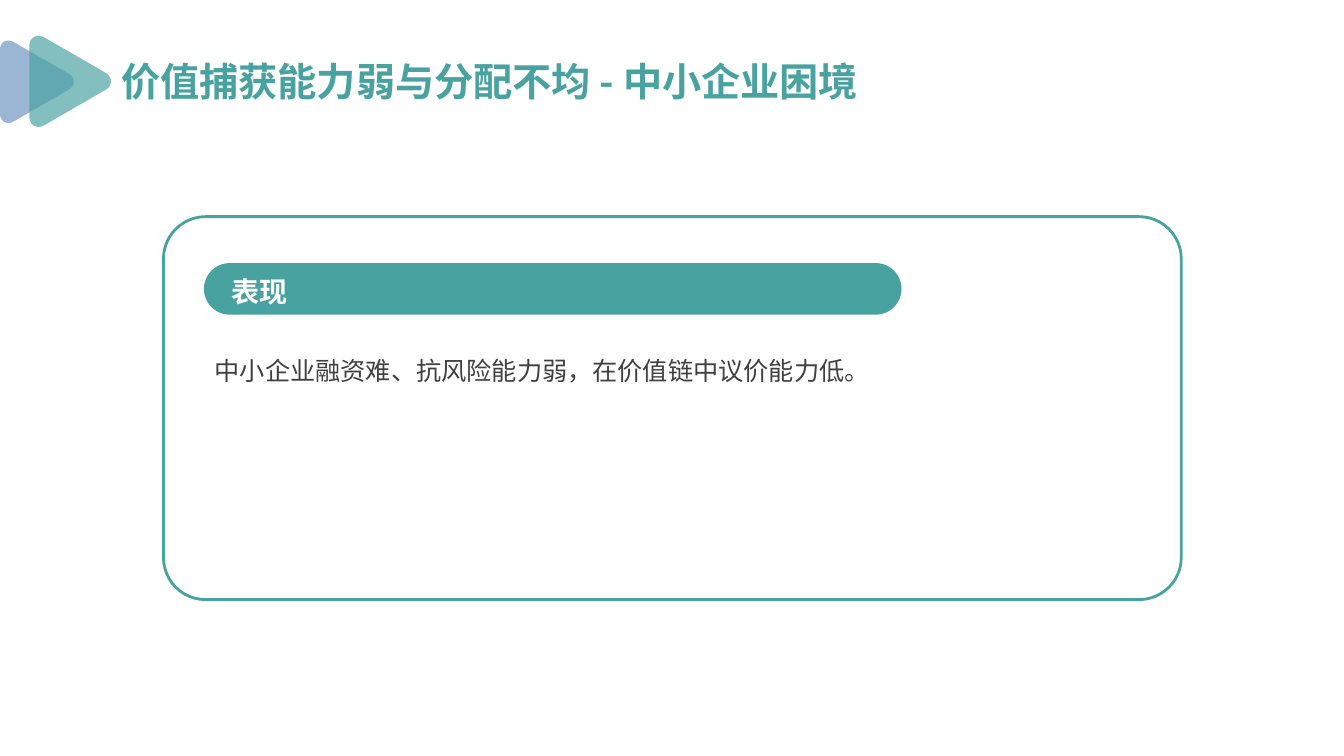
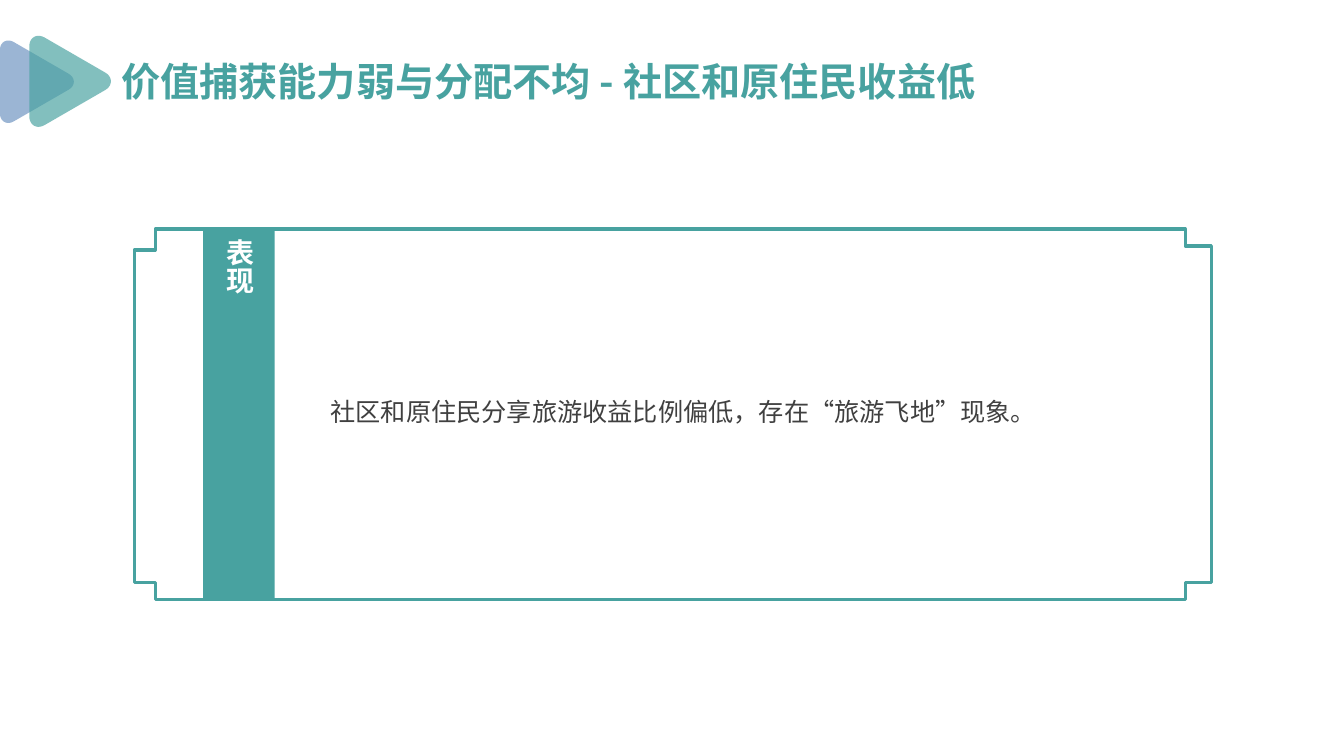
import pptx
import pptx.dml.color
import pptx.enum.shapes
import pptx.enum.text
import pptx.oxml.ns
import pptx.oxml.xmlchemy
import pptx.util
import math

Cm = pptx.util.Cm
Pt = pptx.util.Pt
qn = pptx.oxml.ns.qn
new_element = pptx.oxml.xmlchemy.OxmlElement
SHAPE = pptx.enum.shapes.MSO_SHAPE
ANCHOR = pptx.enum.text.MSO_ANCHOR
ALIGN = pptx.enum.text.PP_ALIGN

COLORS = {"teal": "48A2A0", "blue": "6C92C0", "text": "404040", "white": "FFFFFF"}
FONT = "Noto Sans CJK SC"
TITLE_ONLY = 5


def rgb(name):
    return pptx.dml.color.RGBColor.from_string(COLORS[name])


def write(frame, text, size=18, color="text", bold=False, spacing=None,
          anchor=ANCHOR.TOP, vertical=False):
    """Put one formatted paragraph into a text frame."""
    frame.word_wrap = True
    frame.auto_size = pptx.enum.text.MSO_AUTO_SIZE.NONE
    frame.vertical_anchor = anchor
    if vertical:
        frame._txBody.bodyPr.set("vert", "eaVert")
    para = frame.paragraphs[0]
    para.alignment = ALIGN.LEFT
    if spacing:
        para.line_spacing = spacing
    span = para.add_run()
    span.text = text
    font = span.font
    font.name, font.size, font.bold = FONT, Pt(size), bold
    font.color.rgb = rgb(color)
    # East Asian glyphs take their own typeface element
    east_asian = new_element("a:ea")
    east_asian.set("typeface", FONT)
    font._element.find(qn("a:latin")).addnext(east_asian)


def rounded_outline(corners, cut, steps=10):
    """Points of a polygon whose corners are eased by Bezier curves."""
    points = []
    for i, corner in enumerate(corners):
        ends = []
        for other in (corners[i - 1], corners[(i + 1) % len(corners)]):
            share = cut / math.dist(corner, other)
            ends.append([c + (o - c) * share for c, o in zip(corner, other)])
        for step in range(steps + 1):
            t = step / steps
            points.append(tuple(
                a * (1 - t) ** 2 * (1 + t / 2) + c * 1.5 * t * (1 - t)
                + b * t ** 2 * (1.5 - t / 2)
                for a, c, b in zip(ends[0], corner, ends[1])))
    return points


class Slides:
    """Shared style and the slide being built."""

    def __init__(self):
        self.deck = pptx.Presentation()
        self.deck.slide_width, self.deck.slide_height = Cm(33.87), Cm(19.05)
        self.page = None

    def new_page(self, title):
        layout = self.deck.slide_layouts[TITLE_ONLY]
        self.page = self.deck.slides.add_slide(layout)
        box = self.page.shapes.title
        box.left, box.top, box.width, box.height = Cm(2.8), Cm(1.32), Cm(30), Cm(1.45)
        write(box.text_frame, title, size=28, color="teal", bold=True,
              anchor=ANCHOR.MIDDLE)
        self.triangle(0, 2.06, 2.4, "blue")
        self.triangle(0.74, 2.05, 2.65, "teal")

    def style(self, shape, fill=None, line=None, weight=2, opacity=None):
        shape.shadow.inherit = False
        if fill:
            shape.fill.solid()
            shape.fill.fore_color.rgb = rgb(fill)
        else:
            shape.fill.background()
        if line:
            shape.line.color.rgb = rgb(line)
            shape.line.width = Pt(weight)
        else:
            shape.line.fill.background()
        if opacity:
            alpha = new_element("a:alpha")
            alpha.set("val", str(opacity * 1000))
            shape._element.spPr.find(qn("a:solidFill"))[0].append(alpha)

    def outline(self, points, **style):
        points = [(Cm(x), Cm(y)) for x, y in points]
        builder = self.page.shapes.build_freeform(*points[0])
        builder.add_line_segments(points[1:], close=True)
        self.style(builder.convert_to_shape(), **style)

    def triangle(self, left, middle, side, color):
        """Equilateral triangle with soft corners, pointing right."""
        corners = [(left, middle + side / 2), (left, middle - side / 2),
                   (left + side * math.sqrt(3) / 2, middle)]
        self.outline(rounded_outline(corners, side / 6), fill=color, opacity=68)

    def block(self, kind, left, top, width, height, rounding=None, **style):
        shape = self.page.shapes.add_shape(kind, Cm(left), Cm(top), Cm(width), Cm(height))
        if rounding is not None:
            shape.adjustments[0] = rounding
        self.style(shape, **style)

    def text(self, text, left, top, width, height, **style):
        box = self.page.shapes.add_textbox(Cm(left), Cm(top), Cm(width), Cm(height))
        write(box.text_frame, text, **style)


def main():
    slides = Slides()
    heading = {"size": 20, "color": "white", "bold": True}

    # Small firms: rounded card with a pill heading
    slides.new_page("价值捕获能力弱与分配不均 - 中小企业困境")
    slides.block(SHAPE.ROUNDED_RECTANGLE, 4.12, 5.46, 25.65, 9.65,
                 rounding=0.11, line="teal")
    slides.block(SHAPE.ROUNDED_RECTANGLE, 5.14, 6.63, 17.58, 1.3,
                 rounding=0.5, fill="teal")
    slides.text("中小企业融资难、抗风险能力弱，在价值链中议价能力低。",
                5.16, 8.53, 24.16, 4.67, spacing=1.4)
    slides.text("表现", 5.59, 6.78, 16.66, 1.02, **heading)

    # Communities: notched frame with a vertical heading
    slides.new_page("价值捕获能力弱与分配不均 - 社区和原住民收益低")
    left, top, right, bottom = 3.38, 5.77, 30.53, 15.11
    inner_left, inner_right, notch = left + 0.53, right - 0.66, 0.43
    slides.outline([
        (inner_left, top), (inner_right, top),
        (inner_right, top + notch), (right, top + notch),
        (right, bottom - notch), (inner_right, bottom - notch),
        (inner_right, bottom), (inner_left, bottom),
        (inner_left, bottom - notch), (left, bottom - notch),
        (left, top + 0.53), (inner_left, top + 0.53),
    ], line="teal", weight=2.25)
    slides.block(SHAPE.RECTANGLE, 5.12, top, 1.8, bottom - top, fill="teal")
    slides.text("表现", 5.34, top, 1.37, bottom - top, vertical=True,
                anchor=ANCHOR.MIDDLE, **heading)
    slides.text("社区和原住民分享旅游收益比例偏低，存在“旅游飞地”现象。",
                8.08, 6.98, 20.47, 6.48, spacing=1.4, anchor=ANCHOR.MIDDLE)

    slides.deck.save("out.pptx")


if __name__ == "__main__":
    main()
